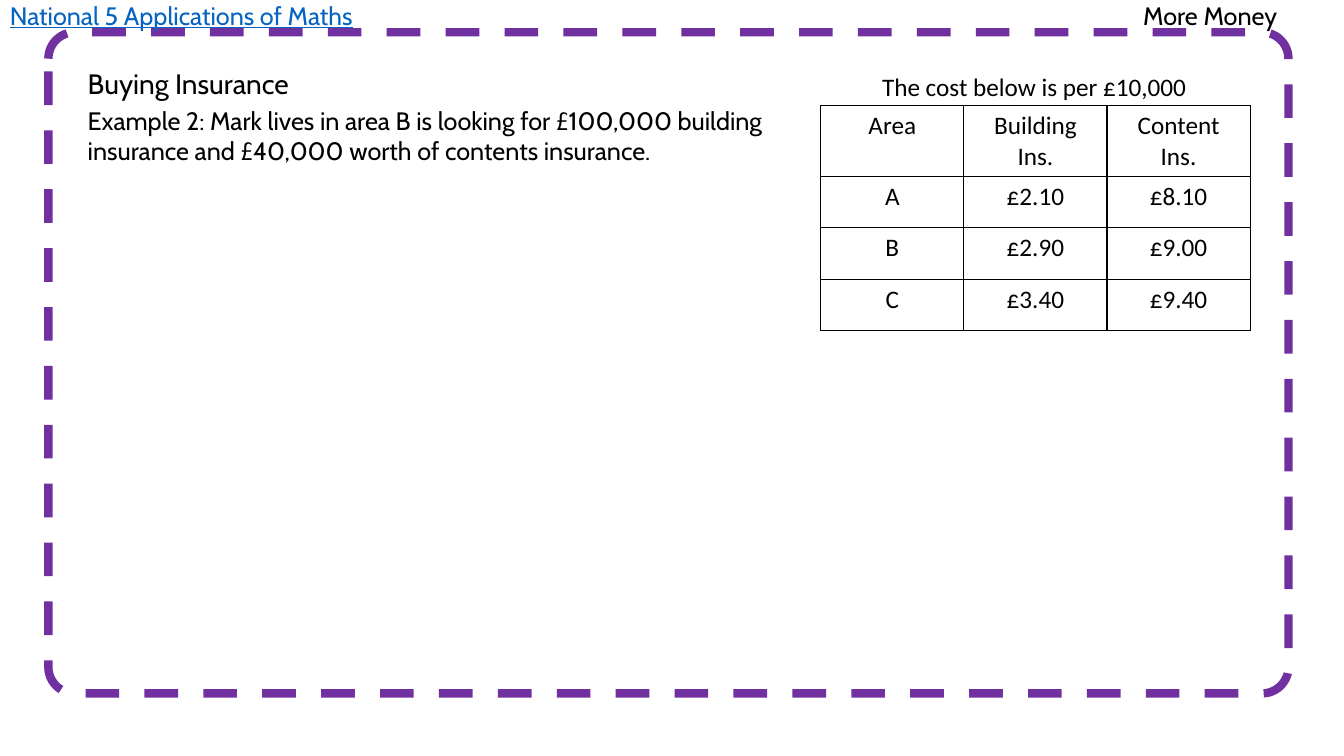
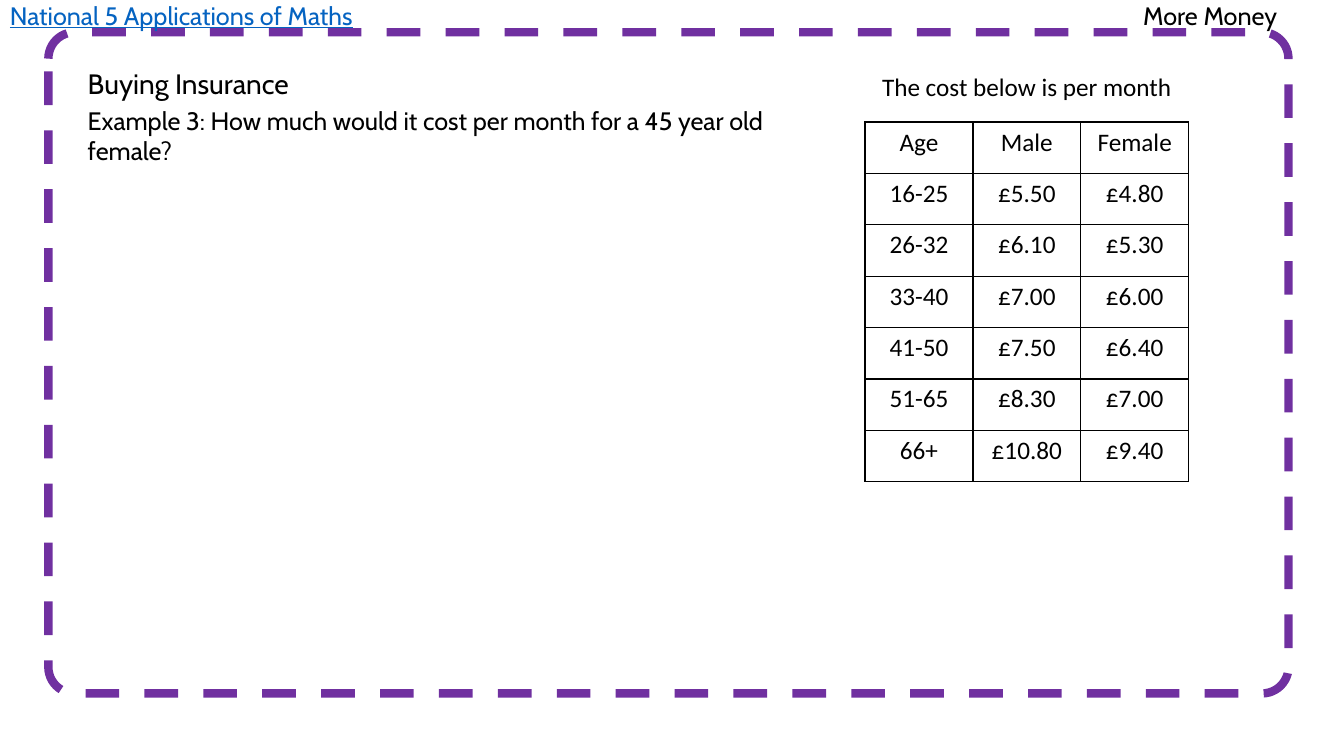
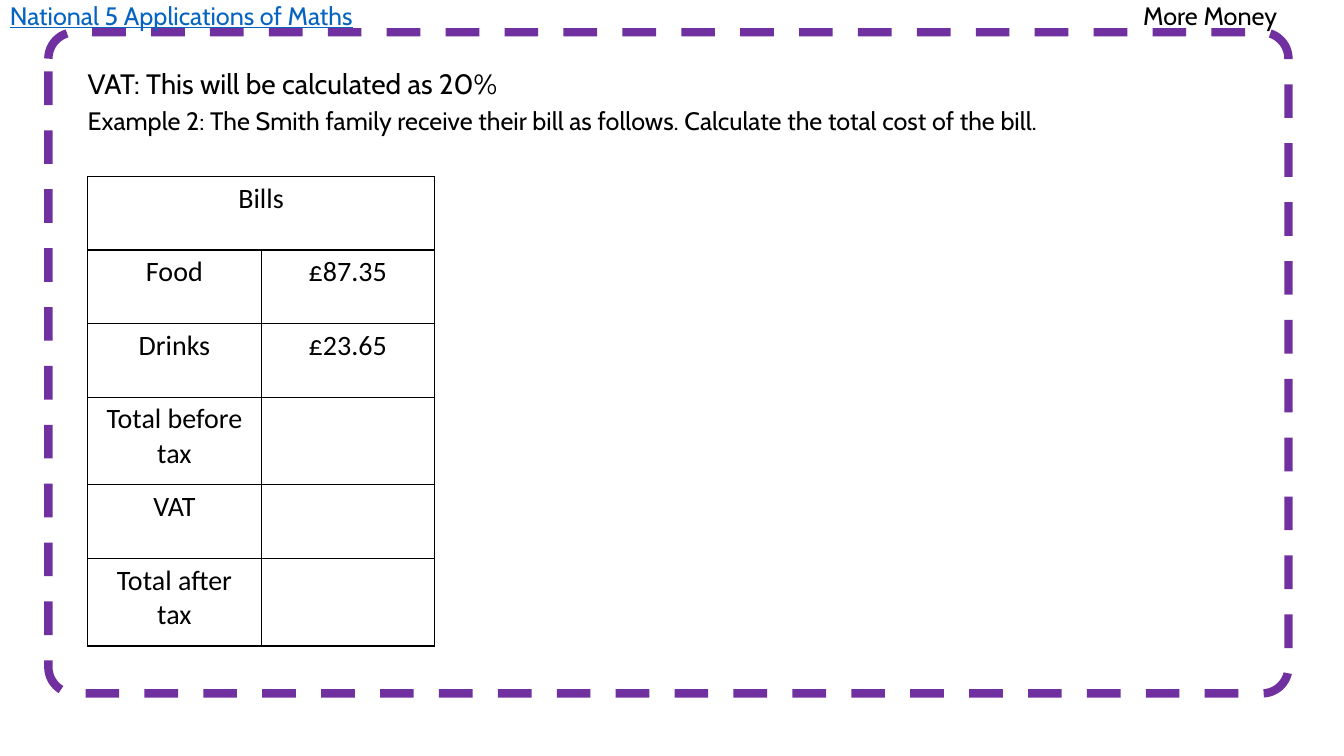
from dataclasses import dataclass

from lxml import etree
from pptx import Presentation
from pptx import util as u
from pptx.dml.color import RGBColor
from pptx.enum import dml, shapes, text
from pptx.oxml.ns import qn

PX = 9144  # EMU per px, 100 px to the inch


@dataclass(frozen=True)
class Theme:
    ink: str = "000000"
    link: str = "0563C1"
    frame: str = "7030A0"
    heading_font: str = "Cabin"
    table_font: str = "Calibri"
    large: int = 20
    normal: int = 18
    frame_line: int = 6
    table_line: int = 1


THEME = Theme()

# Content: boxes are (left, top, width, height) in px
SLIDE_SIZE = (1333, 750)
FRAME_BOX = (48, 32, 1230, 656)
COURSE = ("National 5 Applications of Maths", (0, -5, 383, 40))
TOPIC = ("More Money", (1124, -5, 154, 40))

PAGES = [
    {
        "title": ("Buying Insurance", (77, 61, 231, 44)),
        "example": ("Example 2: Mark lives in area B is looking for £100,000 building "
                    "insurance and £40,000 worth of contents insurance.",
                    (77, 99, 714, 71)),
        "caption": ("The cost below is per £10,000", (865, 66, 326, 40)),
        "table": {
            "corner": (814, 105), "column": 142, "heights": [70] + [51] * 3,
            "size": THEME.normal,
            "rows": [
                ("Area", "Building Ins.", "Content Ins."),
                ("A", "£2.10", "£8.10"),
                ("B", "£2.90", "£9.00"),
                ("C", "£3.40", "£9.40"),
            ],
        },
    },
    {
        "title": ("Buying Insurance", (77, 61, 231, 44)),
        "example": ("Example 3: How much would it cost per month for a 45 year old female?",
                    (77, 99, 714, 71)),
        "caption": ("The cost below is per month", (865, 66, 317, 40)),
        "table": {
            "corner": (858, 121), "column": 107, "heights": [51] * 7,
            "size": THEME.normal,
            "rows": [
                ("Age", "Male", "Female"),
                ("16-25", "£5.50", "£4.80"),
                ("26-32", "£6.10", "£5.30"),
                ("33-40", "£7.00", "£6.00"),
                ("41-50", "£7.50", "£6.40"),
                ("51-65", "£8.30", "£7.00"),
                ("66+", "£10.80", "£9.40"),
            ],
        },
    },
    {
        "title": ("VAT: This will be calculated as 20%", (77, 61, 460, 44)),
        "example": ("Example 2: The Smith family receive their bill as follows. "
                    "Calculate the total cost of the bill.",
                    (77, 99, 1149, 40)),
        "table": {
            "corner": (87, 175), "column": 172, "heights": [73, 73, 73, 87, 73, 87],
            "size": THEME.large,
            "rows": [
                ("Bills",),
                ("Food", "£87.35"),
                ("Drinks", "£23.65"),
                ("Total before tax", ""),
                ("VAT", ""),
                ("Total after tax", ""),
            ],
        },
    },
]


def emu(lengths):
    return [u.Emu(length * PX) for length in lengths]


def add_span(para, words, size, font, colour=THEME.ink, underline=None):
    span = para.add_run()
    span.text = words
    span.font.size = u.Pt(size)
    span.font.name = font
    span.font.color.rgb = RGBColor.from_string(colour)
    span.font.underline = underline


def write_line(box, words, place, size, wrap=False, font=THEME.heading_font, **style):
    """Place a text box or placeholder and fill it with one left-aligned paragraph."""
    box.left, box.top, box.width, box.height = emu(place)
    frame = box.text_frame
    frame.word_wrap = wrap
    frame.auto_size = text.MSO_AUTO_SIZE.SHAPE_TO_FIT_TEXT
    frame.vertical_anchor = text.MSO_ANCHOR.TOP
    para = frame.paragraphs[0]
    para.alignment = text.PP_ALIGN.LEFT
    para.space_before = u.Pt(0)
    add_span(para, words, size, font, **style)
    return para


def add_text(page, words, place, **style):
    write_line(page.shapes.add_textbox(*emu(place)), words, place, THEME.normal, **style)


def add_frame(page):
    frame = page.shapes.add_shape(shapes.MSO_SHAPE.ROUNDED_RECTANGLE, *emu(FRAME_BOX))
    frame.adjustments[0] = 0.04
    frame.shadow.inherit = False
    frame.fill.background()
    frame.line.color.rgb = RGBColor.from_string(THEME.frame)
    frame.line.width = u.Pt(THEME.frame_line)
    frame.line.dash_style = dml.MSO_LINE.DASH


def style_cell(cell):
    properties = cell._tc.get_or_add_tcPr()
    for side in ("a:lnL", "a:lnR", "a:lnT", "a:lnB"):
        line = etree.SubElement(properties, qn(side), w=str(u.Pt(THEME.table_line)))
        fill = etree.SubElement(line, qn("a:solidFill"))
        etree.SubElement(fill, qn("a:srgbClr"), val=THEME.ink)
    cell.fill.background()


def add_price_table(page, corner, column, heights, size, rows):
    columns = max(len(row) for row in rows)
    place = (*corner, column * columns, sum(heights))
    table = page.shapes.add_table(len(rows), columns, *emu(place)).table
    table.first_row = table.horz_banding = False
    for table_column in table.columns:
        table_column.width = u.Emu(column * PX)
    for table_row, height in zip(table.rows, heights):
        table_row.height = u.Emu(height * PX)
    for cell in table.iter_cells():
        style_cell(cell)
    for r, row in enumerate(rows):
        # A short row spans the full width
        if len(row) < columns:
            table.cell(r, 0).merge(table.cell(r, columns - 1))
        for c, words in enumerate(row):
            if words:
                para = table.cell(r, c).text_frame.paragraphs[0]
                para.alignment = text.PP_ALIGN.CENTER
                add_span(para, words, size, THEME.table_font)


def add_page(deck, content):
    page = deck.slides.add_slide(deck.slide_layouts[1])
    add_frame(page)

    # Title and example
    write_line(page.shapes.title, *content["title"], THEME.large)
    example = write_line(page.placeholders[1], *content["example"], THEME.normal, wrap=True)
    properties = example._p.get_or_add_pPr()
    properties.set("marL", "0")
    properties.set("indent", "0")
    etree.SubElement(properties, qn("a:buNone"))

    # Running header
    add_text(page, *COURSE, colour=THEME.link, underline=True)
    add_text(page, *TOPIC)

    # Table and its caption
    add_price_table(page, **content["table"])
    if "caption" in content:
        add_text(page, *content["caption"], font=THEME.table_font)


def main():
    deck = Presentation()
    deck.slide_width, deck.slide_height = emu(SLIDE_SIZE)
    for content in PAGES:
        add_page(deck, content)
    deck.save("out.pptx")


if __name__ == "__main__":
    main()
